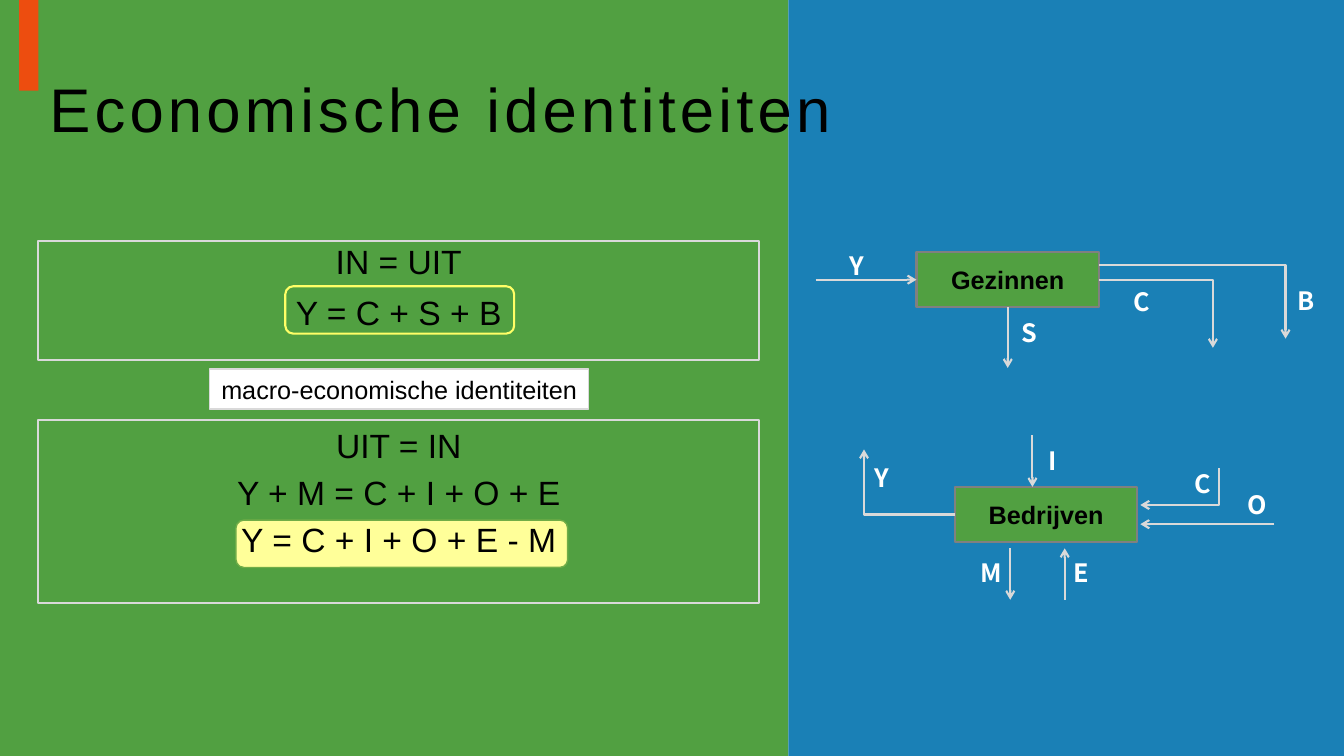
from lxml.etree import SubElement
from pptx import Presentation
from pptx.dml.color import RGBColor
from pptx.enum.shapes import MSO_CONNECTOR, MSO_SHAPE
from pptx.enum.text import MSO_ANCHOR, PP_ALIGN
from pptx.oxml.ns import qn
from pptx.util import Inches, Pt

GREEN, BLUE, ORANGE = "51A041", "1A80B6", "ED4D0F"
BLACK, WHITE, LIGHT, GREY = "000000", "FFFFFF", "D9D9D9", "808080"
LABEL_FONT = "Noto Sans CJK SC"


def rgb(value):
    """Turn a hex string into a colour."""
    return RGBColor.from_string(value)


def add_box(s, x, y, w, h, fill=None, line=None, width=1.5, kind=MSO_SHAPE.RECTANGLE):
    """Draw a shape with an optional fill and outline."""
    sp = s.shapes.add_shape(kind, Inches(x), Inches(y), Inches(w), Inches(h))
    sp.shadow.inherit = False
    if fill:
        sp.fill.solid()
        sp.fill.fore_color.rgb = rgb(fill)
    else:
        sp.fill.background()
    if line:
        sp.line.color.rgb = rgb(line)
        sp.line.width = Pt(width)
    else:
        sp.line.fill.background()
    return sp


def write(sp, text, size, color=BLACK, bold=False, font="Arial", align=PP_ALIGN.CENTER,
          anchor=MSO_ANCHOR.TOP, wrap=True, before=0, spacing=None):
    """Fill a shape with text, one paragraph a line."""
    tf = sp.text_frame
    tf.text = text
    tf.word_wrap = wrap
    tf.vertical_anchor = anchor
    for p in tf.paragraphs:
        p.alignment = align
        p.space_before = Pt(before)
        if spacing:
            p.line_spacing = spacing
        for r in p.runs:
            r.font.size = Pt(size)
            r.font.name = font
            r.font.bold = bold
            r.font.color.rgb = rgb(color)


def add_label(s, x, y, w, text):
    """Place the letter of a flow."""
    sp = s.shapes.add_textbox(Inches(x), Inches(y), Inches(w), Inches(0.4))
    write(sp, text, 18, WHITE, True, LABEL_FONT, PP_ALIGN.LEFT, wrap=False)


def add_arrow(s, x1, y1, x2, y2, bent=False, end="tailEnd"):
    """Draw a straight arrow, or one that runs across and then up or down."""
    kind = MSO_CONNECTOR.ELBOW if bent else MSO_CONNECTOR.STRAIGHT
    c = s.shapes.add_connector(kind, Inches(x1), Inches(y1), Inches(x2), Inches(y2))
    c.line.color.rgb = rgb(LIGHT)
    c.line.width = Pt(1.5)
    sp_pr = c._element.spPr
    if bent:
        sp_pr.find(qn("a:prstGeom")).set("prst", "bentConnector2")
    SubElement(sp_pr.find(qn("a:ln")), qn("a:" + end)).set("type", "arrow")
    SubElement(sp_pr, qn("a:effectLst"))
    return c


def add_background(s, w, h):
    """Draw the two panels and the accent strip."""
    split = 7.82
    add_box(s, 0, 0, split, h, GREEN)
    add_box(s, split, 0, w - split, h, BLUE)
    add_box(s, 0.19, 0, 0.19, 0.9, ORANGE)


def add_title(s, x, y, w, h):
    """Write the slide title with wide letter spacing."""
    sp = s.shapes.add_textbox(Inches(x), Inches(y), Inches(w), Inches(h))
    write(sp, "Economische identiteiten", 44, align=PP_ALIGN.LEFT,
          anchor=MSO_ANCHOR.MIDDLE, spacing=0.9)
    sp.text_frame.paragraphs[0].runs[0].font._element.set("spc", "300")


def add_identities(s, x, y, w):
    """Stack the two framed identities with their caption between them."""
    rounded = MSO_SHAPE.ROUNDED_RECTANGLE
    add_box(s, x + 1.96, y + 2.77, 3.29, 0.47, "FFFF99", "70AD47", 1, rounded)
    households = add_box(s, x, y, w, 1.18, line=LIGHT)
    write(households, "IN = UIT\nY = C + S + B", 24, before=10, spacing=0.9)
    firms = add_box(s, x, y + 1.78, w, 1.81, line=LIGHT)
    write(firms, "UIT = IN\nY + M = C + I + O + E\nY = C + I + O + E - M", 24, before=4.8)
    caption = add_box(s, x + 1.7, y + 1.27, 3.76, 0.4, WHITE, LIGHT, 1)
    write(caption, "macro-economische identiteiten", 18, wrap=False)
    add_box(s, x + 2.45, y + 0.45, 2.27, 0.47, line="FFFF66", kind=rounded)


def add_sector(s, x, y, w, h, name, labels):
    """Draw a sector box with the letters around it."""
    sp = add_box(s, x, y, w, h, GREEN, GREY)
    write(sp, name, 18, bold=True, anchor=MSO_ANCHOR.MIDDLE)
    for text, dx, dy, width in labels:
        add_label(s, x + dx, y + dy, width, text)
    return sp


def add_households(s, x, y, w, h):
    """Draw the households with their income and spending."""
    labels = [("Y", -0.76, -0.07, 0.35), ("C", 2.05, 0.29, 0.36),
              ("B", 3.68, 0.28, 0.35), ("S", 0.94, 0.6, 0.35)]
    sp = add_sector(s, x, y, w, h, "Gezinnen", labels)
    mid = y + h / 2
    add_arrow(s, x + w / 2, y + h, x + w / 2, y + 1.15).begin_connect(sp, 2)
    add_arrow(s, x - 1, mid, x, mid).end_connect(sp, 1)
    add_arrow(s, x + w, y + 0.13, x + 3.66, y + 0.86, bent=True)
    add_arrow(s, x + w, mid, x + 2.94, y + 0.95, bent=True).begin_connect(sp, 3)


def add_firms(s, x, y, w, h):
    """Draw the firms with their receipts and payments."""
    labels = [("Y", -0.9, -0.29, 0.35), ("C", 2.28, -0.23, 0.36), ("I", 0.83, -0.46, 0.27),
              ("O", 2.8, -0.02, 0.39), ("M", 0.16, 0.65, 0.42), ("E", 1.08, 0.65, 0.34)]
    sp = add_sector(s, x, y, w, h, "Bedrijven", labels)
    near, far = y + 0.61, y + 1.12
    add_arrow(s, x + 1.09, far, x + 1.09, near)
    add_arrow(s, x + 0.55, near, x + 0.55, far)
    add_arrow(s, x, y + h / 2, x - 0.9, y - 0.37, bent=True).begin_connect(sp, 1)
    add_arrow(s, x + 0.77, y - 0.51, x + 0.77, y)
    add_arrow(s, x + 1.84, y + 0.18, x + 2.62, y - 0.19, bent=True, end="headEnd")
    add_arrow(s, x + 3.17, y + 0.37, x + 1.84, y + 0.37)


def main():
    """Build and save the slide."""
    prs = Presentation()
    prs.slide_width, prs.slide_height = Inches(13.33), Inches(7.5)
    s = prs.slides.add_slide(prs.slide_layouts[6])
    add_background(s, 13.33, 7.5)
    add_title(s, 0.39, 0.39, 12.61, 1.45)
    add_identities(s, 0.38, 2.39, 7.15)
    add_households(s, 9.09, 2.5, 1.81, 0.55)
    add_firms(s, 9.47, 4.83, 1.81, 0.55)
    prs.save("out.pptx")


if __name__ == "__main__":
    main()
